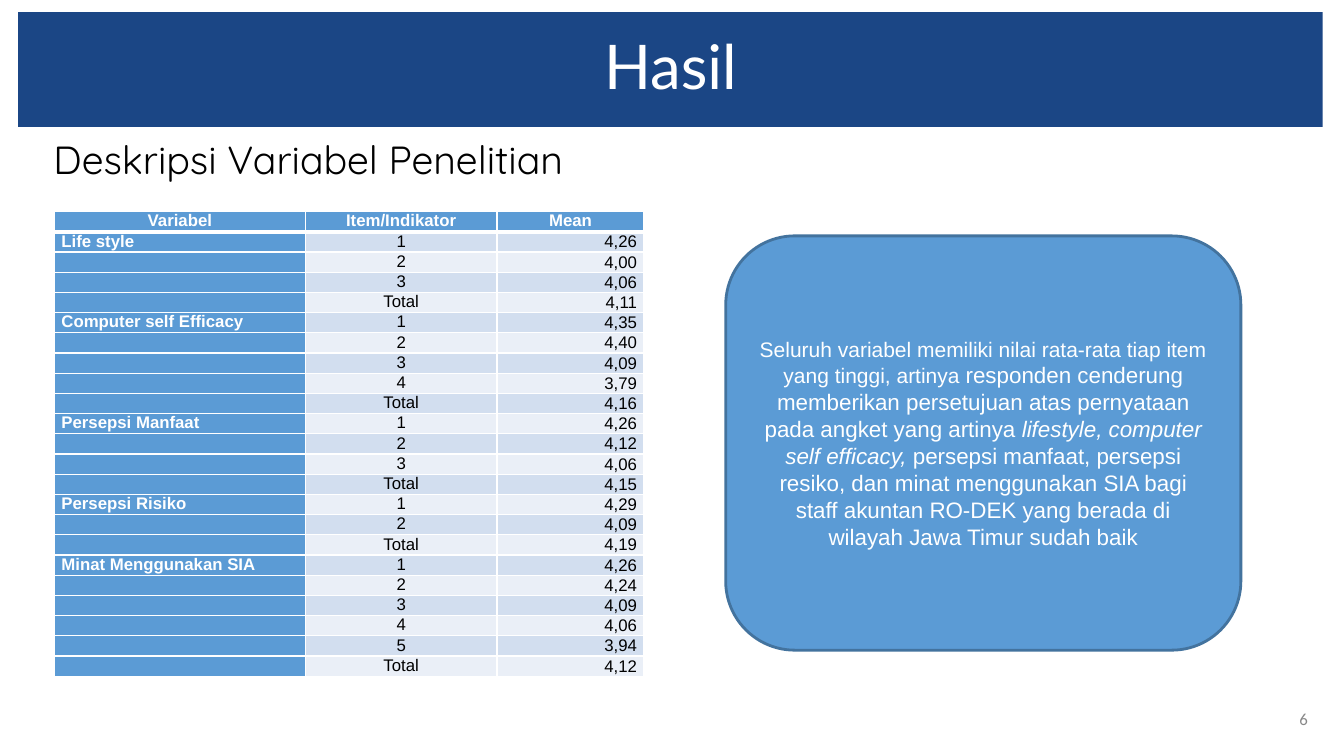
from pptx import Presentation
from pptx.dml.color import RGBColor as RGB
from pptx.enum.shapes import MSO_SHAPE as SHAPE
from pptx.enum.text import MSO_ANCHOR as ANCHOR, PP_ALIGN as ALIGN
from pptx.oxml.ns import qn
from pptx.util import Inches, Pt
from lxml.etree import SubElement

C = {"navy": "1B4685", "blue": "5B9BD5", "edge": "43739E", "dark_band": "D2DEEF",
     "light_band": "EAEFF7", "white": "FFFFFF", "black": "000000", "gray": "888888"}

prs = Presentation()
prs.slide_width, prs.slide_height = Inches(13.33), Inches(7.5)
col, row = prs.slide_width / 100, prs.slide_height / 100
s = prs.slides.add_slide(prs.slide_layouts[6])


def place(x, y, w, h):
    return int(x * col), int(y * row), int(w * col), int(h * row)


def style(p, font, size, color, align, bold=False):
    p.alignment = align
    for r in p.runs:
        r.font.name, r.font.size, r.font.bold = font, Pt(size), bold
        r.font.color.rgb = RGB.from_string(C[color])


title = s.shapes.add_shape(SHAPE.RECTANGLE, *place(1.35, 1.6, 97.07, 15.2))
title.shadow.inherit = False
title.fill.solid()
title.fill.fore_color.rgb = RGB.from_string(C["navy"])
title.line.fill.background()
title.text_frame.text = "Hasil"
title.text_frame.vertical_anchor = ANCHOR.MIDDLE
p = title.text_frame.paragraphs[0]
p.line_spacing = 0.9
style(p, "Lato", 44, "white", ALIGN.CENTER)

heading = s.shapes.add_textbox(*place(1.35, 18, 97.07, 8))
tf = heading.text_frame
tf.word_wrap = True
tf.margin_left = Inches(0.35)
tf.text = "Deskripsi Variabel Penelitian"
tf.paragraphs[0].line_spacing = 0.9
style(tf.paragraphs[0], "Quicksand", 28, "black", ALIGN.LEFT)

variables = {
    "Life style": ["4,26", "4,00", "4,06", "4,11"],
    "Computer self Efficacy": ["4,35", "4,40", "4,09", "3,79", "4,16"],
    "Persepsi Manfaat": ["4,26", "4,12", "4,06", "4,15"],
    "Persepsi Risiko": ["4,29", "4,09", "4,19"],
    "Minat Menggunakan SIA": ["4,26", "4,24", "4,09", "4,06", "3,94", "4,12"],
}
rows = [("Variabel", "Item/Indikator", "Mean")]
for name, means in variables.items():
    for i, mean in enumerate(means, 1):
        rows.append((name if i == 1 else "", "Total" if i == len(means) else str(i), mean))

widths = [18.68, 14.25, 10.95]
aligns = [ALIGN.JUSTIFY, ALIGN.CENTER, ALIGN.RIGHT]
table = s.shapes.add_table(len(rows), len(widths),
                           *place(4.05, 28, sum(widths), 2.4 * len(rows))).table
for column, width in zip(table.columns, widths):
    column.width = int(width * col)
for i, values in enumerate(rows):
    for j, value in enumerate(values):
        cell = table.cell(i, j)
        cell.margin_left = cell.margin_right = Inches(0.07)
        cell.margin_top = cell.margin_bottom = 0
        cell.vertical_anchor = ANCHOR.MIDDLE if i and j == 2 else ANCHOR.TOP
        cell.text = value
        label = i == 0 or j == 0
        p = cell.text_frame.paragraphs[0]
        style(p, "Arial", 12, "white" if label else "black",
              aligns[j] if i else ALIGN.CENTER, label)
        if not value:
            end = SubElement(p._p, qn("a:endParaRPr"), sz="1200")
            SubElement(end, qn("a:latin"), typeface="Arial")
        tcPr = cell._tc.get_or_add_tcPr()
        for side in ("lnL", "lnR", "lnT", "lnB"):
            thick = (i == 0 and side == "lnB") or (i == 1 and side == "lnT")
            ln = SubElement(tcPr, qn(f"a:{side}"), w=str(Pt(3 if thick else 1)))
            SubElement(SubElement(ln, qn("a:solidFill")), qn("a:srgbClr"), val=C["white"])
        band = "blue" if label else "dark_band" if i % 2 else "light_band"
        cell.fill.solid()
        cell.fill.fore_color.rgb = RGB.from_string(C[band])

summary = s.shapes.add_shape(SHAPE.ROUNDED_RECTANGLE, *place(54, 31.2, 38.33, 54.8))
summary.shadow.inherit = False
summary.fill.solid()
summary.fill.fore_color.rgb = RGB.from_string(C["blue"])
summary.line.color.rgb = RGB.from_string(C["edge"])
summary.line.width = Pt(2)
tf = summary.text_frame
tf.word_wrap = True
tf.vertical_anchor = ANCHOR.MIDDLE
p = tf.paragraphs[0]
for text in ("Seluruh variabel memiliki nilai rata-rata tiap item yang tinggi, artinya ",
             "responden cenderung memberikan persetujuan atas pernyataan pada angket yang artinya ",
             "lifestyle, computer self efficacy, ",
             "persepsi manfaat, persepsi resiko, dan minat menggunakan SIA bagi staff akuntan "
             "RO-DEK yang berada di wilayah Jawa Timur sudah baik"):
    p.add_run().text = text
style(p, "Arial", 16, "white", ALIGN.CENTER)
p.runs[0].font.size = Pt(15)
p.runs[2].font.italic = True

number = s.shapes.add_textbox(*place(93.77, 92.4, 4.28, 5.33))
tf = number.text_frame
tf.word_wrap = True
tf.vertical_anchor = ANCHOR.MIDDLE
tf.text = "6"
style(tf.paragraphs[0], "Calibri", 12, "gray", ALIGN.RIGHT)

prs.save("out.pptx")
